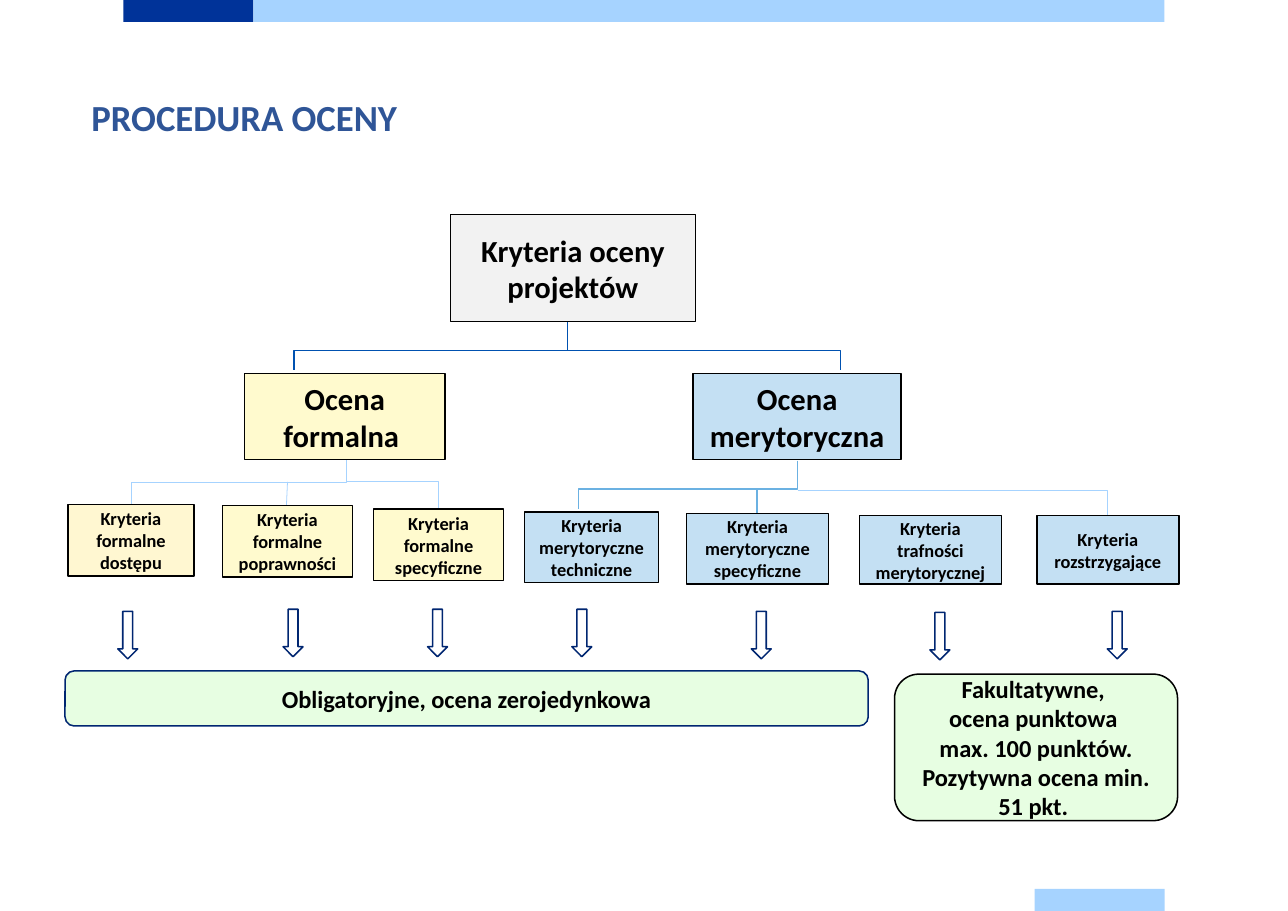
from dataclasses import dataclass
from lxml import etree
from pptx import Presentation, util as u
from pptx.dml import color
from pptx.enum import shapes as kinds, text as txt
from pptx.oxml import ns

Pt = u.Pt


@dataclass(frozen=True)
class Theme:
    font: str = "Calibri"
    head: int = 24
    big: int = 20
    note: int = 16
    small: int = 12
    black: str = "000000"
    white: str = "FFFFFF"
    title: str = "2F5597"
    navy: str = "003399"
    sky: str = "A6D3FF"
    trunk: str = "0051B0"
    branch: str = "6BB1E2"
    edge: str = "002671"
    grey: str = "F2F2F2"
    yellow: str = "FFFACE"
    cream: str = "FFF7D1"
    blue: str = "C4E0F3"
    green: str = "E7FEE2"


T = Theme()
RECT = kinds.MSO_SHAPE.RECTANGLE
ROUND = kinds.MSO_SHAPE.ROUNDED_RECTANGLE
DOWN = kinds.MSO_SHAPE.DOWN_ARROW


@dataclass(frozen=True)
class Box:
    x: float
    y: float
    w: float
    h: float
    fill: str
    lines: tuple = ()
    size: int = T.small
    edge: str | None = T.black
    width: float = 1
    kind: int = RECT


@dataclass(frozen=True)
class Link:
    points: tuple
    hue: str
    width: float


def rgb(code: str) -> color.RGBColor:
    return color.RGBColor.from_string(code)


def put(target, values: dict) -> None:
    for name, value in values.items():
        setattr(target, name, value)


def write(frame, lines: tuple, size: int, hue: str, align) -> None:
    for i, line in enumerate(lines):
        para = frame.paragraphs[0] if i == 0 else frame.add_paragraph()
        para.alignment = align
        run = para.add_run()
        run.text = line
        put(run.font, {"name": T.font, "size": Pt(size), "bold": True})
        run.font.color.rgb = rgb(hue)


def stroke(line, hue: str, width: float) -> None:
    line.color.rgb = rgb(hue)
    line.width = Pt(width)


def draw_box(slide, box: Box) -> None:
    shape = slide.shapes.add_shape(
        box.kind, Pt(box.x), Pt(box.y), Pt(box.w), Pt(box.h))
    shape.shadow.inherit = False
    shape.fill.solid()
    shape.fill.fore_color.rgb = rgb(box.fill)
    if box.edge:
        stroke(shape.line, box.edge, box.width)
    else:
        shape.line.fill.background()
    if box.lines:
        put(shape.text_frame, {"word_wrap": True,
                               "vertical_anchor": txt.MSO_ANCHOR.MIDDLE})
        write(shape.text_frame, box.lines, box.size, T.black, txt.PP_ALIGN.CENTER)


def draw_link(slide, link: Link) -> None:
    points = [(Pt(x), Pt(y)) for x, y in link.points]
    if len(points) == 2:
        line = slide.shapes.add_connector(
            kinds.MSO_CONNECTOR.STRAIGHT, *points[0], *points[1])
        stroke(line.line, link.hue, link.width)
        etree.SubElement(line._element.spPr, ns.qn("a:effectLst"))
        return
    pen = slide.shapes.build_freeform(*points[0])
    pen.add_line_segments(points[1:], close=False)
    shape = pen.convert_to_shape()
    shape.shadow.inherit = False
    shape.fill.background()
    stroke(shape.line, link.hue, link.width)


def elbow(x: float, top: float, mid: float, end: float, low: float,
          hue: str, width: float) -> Link:
    return Link(((x, top), (x, mid), (end, mid), (end, low)), hue, width)


# Bars at the page edges
BARS = [
    Box(80.6, 0, 85, 14.4, T.navy, edge=None),
    Box(165.6, 0, 595.4, 14.4, T.sky, edge=None),
    Box(676.1, 581, 85, 14.4, T.sky, edge=None),
]

# Lines of the tree
LINKS = [
    *(elbow(370.8, 210.2, 229, end, 241.9, T.trunk, 1) for end in (192.2, 549.4)),
    elbow(521.3, 301, 319.7, 378, 332.6, T.branch, 1),
    Link(((494.6, 320.4), (494.6, 335.5)), T.branch, 1),
    Link(((521.3, 320.4), (723.6, 320.4), (723.6, 337)), T.sky, 0.5),
    elbow(226.1, 300.2, 315.4, 85.7, 329.8, T.sky, 0.5),
    elbow(226.1, 300.2, 314.6, 286.6, 332.6, T.sky, 0.5),
    Link(((187.9, 315), (187.2, 330)), T.sky, 0.5),
]

# Boxes of the tree
NODES = [
    Box(294.5, 140.4, 159.8, 69.8, T.grey, ("Kryteria oceny projektów",), T.big,
        width=0.5),
    Box(159.8, 244.1, 131, 56.2, T.yellow, ("Ocena formalna ",), T.big),
    Box(452.9, 244.1, 136.1, 56.2, T.blue, ("Ocena merytoryczna",), T.big),
    Box(44.6, 329.8, 82.1, 46.8, T.cream, ("Kryteria formalne dostępu",)),
    Box(145.4, 330.5, 85, 46.8, T.yellow, ("Kryteria formalne poprawności",)),
    Box(244.1, 332.6, 85, 46.8, T.yellow, ("Kryteria formalne specyficzne",)),
    Box(342.7, 334.8, 87.8, 46.1, T.blue, ("Kryteria", "merytoryczne techniczne")),
    Box(448.6, 335.5, 92.9, 46.1, T.blue, ("Kryteria merytoryczne specyficzne",)),
    Box(561.6, 337, 92.9, 44.6, T.blue, ("Kryteria trafności merytorycznej",)),
    Box(677.5, 337, 92.9, 44.6, T.blue, ("Kryteria rozstrzygające",)),
]

# Arrows from criteria to results
ARROWS = [
    Box(x, y, 13, 31, T.white, edge=T.edge, kind=DOWN)
    for x, y in ((77, 399.6), (185, 398.2), (279.4, 398.2), (373.7, 398.2),
                 (491, 399.6), (607.7, 400.3), (723.6, 399.6))
]

# Results
ENDS = [
    Box(42.5, 438.5, 524.9, 36, T.green, ("Obligatoryjne, ocena zerojedynkowa",),
        T.note, T.edge, kind=ROUND),
    Box(584.6, 440.6, 185, 95.8, T.green,
        ("Fakultatywne, ", "ocena punktowa ", "max. 100 punktów.",
         "Pozytywna ocena min. 51 pkt. "), T.note, kind=ROUND),
]


def main() -> None:
    deck = Presentation()
    put(deck, {"slide_width": Pt(841.7), "slide_height": Pt(595.4)})
    slide = deck.slides.add_slide(deck.slide_layouts[6])
    for bar in BARS:
        draw_box(slide, bar)

    # Title
    title = slide.shapes.add_textbox(Pt(52.6), Pt(58.3), Pt(736.6), Pt(36))
    title.text_frame.word_wrap = True
    write(title.text_frame, ("PROCEDURA OCENY",), T.head, T.title,
          txt.PP_ALIGN.LEFT)

    for link in LINKS:
        draw_link(slide, link)
    for box in NODES + ARROWS + ENDS:
        draw_box(slide, box)
    deck.save("out.pptx")


if __name__ == "__main__":
    main()
